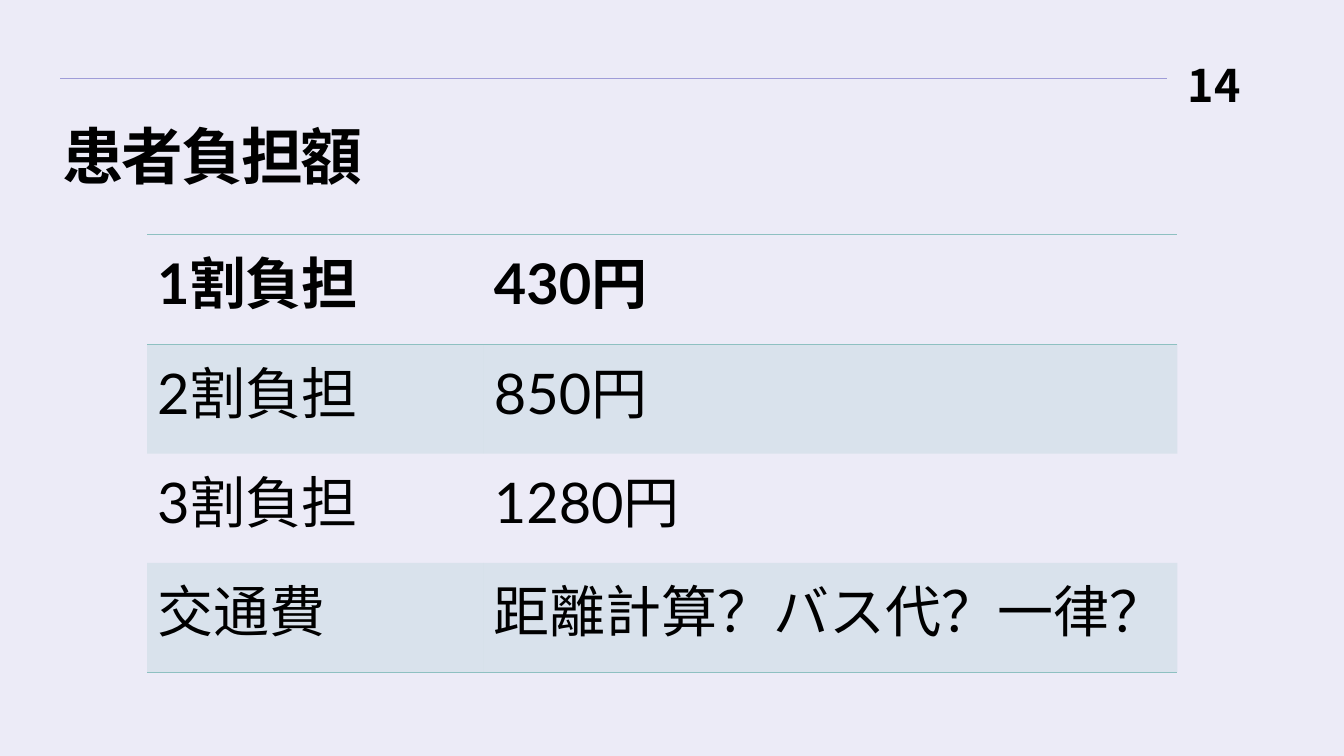
from dataclasses import dataclass
from typing import Optional

import pptx
import pptx.dml.color
import pptx.enum.shapes
import pptx.enum.text
import pptx.oxml
import pptx.oxml.ns
import pptx.util

Pt = pptx.util.Pt
qn = pptx.oxml.ns.qn
ALIGN = pptx.enum.text.PP_ALIGN
ANCHOR = pptx.enum.text.MSO_ANCHOR


@dataclass(frozen=True)
class Theme:
    background: str = "ECEBF7"
    rule: str = "9F9CD8"
    accent: str = "8EC0C1"
    text: str = "000000"
    heading_font: str = "Noto Sans CJK JP"
    table_font: str = "Lato"
    title_size: float = 44
    number_size: float = 32
    table_size: float = 40
    band_alpha: int = 20


@dataclass(frozen=True)
class Label:
    text: str
    left: float
    top: float
    width: float
    height: float
    size: float
    align: ALIGN
    anchor: ANCHOR
    insets: tuple[float, float, float, float]
    line_spacing: Optional[float] = None
    tracking: float = 0


@dataclass(frozen=True)
class Charge:
    category: str
    amount: str


THEME = Theme()

LABELS = [
    Label("患者負担額", 44.64, 86.4, 873.36, 95.04, THEME.title_size,
          ALIGN.LEFT, ANCHOR.TOP, (0, 3.6, 7.2, 3.6), 0.9, -1.5),
    Label("14", 814.32, 41.04, 72, 38.16, THEME.number_size,
          ALIGN.RIGHT, ANCHOR.MIDDLE, (0, 0, 0, 0)),
]

CHARGES = [
    Charge("1割負担", "430円"),
    Charge("2割負担", "850円"),
    Charge("3割負担", "1280円"),
    Charge("交通費", "距離計算？バス代？一律？"),
]
TABLE_LEFT, TABLE_TOP = 105.12, 167.76
COLUMN_WIDTHS = (240.48, 495.36)
ROW_HEIGHT = 78.12


def rgb(value: str) -> pptx.dml.color.RGBColor:
    return pptx.dml.color.RGBColor.from_string(value)


def write(paragraph, text: str, font: str, size: float, bold: bool, tracking: float = 0) -> None:
    run = paragraph.add_run()
    run.text = text
    for name, value in {"name": font, "size": Pt(size), "bold": bold}.items():
        setattr(run.font, name, value)
    run.font.color.rgb = rgb(THEME.text)
    properties = run.font._element
    east_asian = properties.makeelement(qn("a:ea"), {"typeface": THEME.heading_font})
    properties.find(qn("a:latin")).addnext(east_asian)
    if tracking:
        properties.set("spc", str(round(tracking * 100)))


def add_label(slide, label: Label) -> None:
    box = slide.shapes.add_textbox(Pt(label.left), Pt(label.top), Pt(label.width), Pt(label.height))
    frame = box.text_frame
    left, top, right, bottom = map(Pt, label.insets)
    frame_format = {
        "word_wrap": True, "vertical_anchor": label.anchor,
        "margin_left": left, "margin_top": top, "margin_right": right, "margin_bottom": bottom,
    }
    for name, value in frame_format.items():
        setattr(frame, name, value)
    paragraph = frame.paragraphs[0]
    paragraph.alignment = label.align
    paragraph.line_spacing = label.line_spacing
    write(paragraph, label.text, THEME.heading_font, label.size, True, label.tracking)


def add_header_rule(slide) -> None:
    rule = slide.shapes.add_connector(
        pptx.enum.shapes.MSO_CONNECTOR.STRAIGHT, Pt(43.2), Pt(56.16), Pt(833.76), Pt(56.16))
    rule.line.color.rgb = rgb(THEME.rule)
    rule.line.width = Pt(0.75)
    properties = rule._element.spPr
    properties.append(properties.makeelement(qn("a:effectLst"), {}))


def set_borders(cell, ruled_sides: str) -> None:
    """Rule the given sides of a cell and clear the others."""
    properties = cell._tc.get_or_add_tcPr()
    for position, side in enumerate("LRTB"):
        fill = (f'<a:solidFill><a:srgbClr val="{THEME.accent}"/></a:solidFill>'
                if side in ruled_sides else "<a:noFill/>")
        properties.insert(position, pptx.oxml.parse_xml(
            f'<a:ln{side} {pptx.oxml.ns.nsdecls("a")} w="{Pt(1)}">{fill}</a:ln{side}>'))


def fill_band(cell, banded: bool) -> None:
    if not banded:
        cell.fill.background()
        return
    cell.fill.solid()
    cell.fill.fore_color.rgb = rgb(THEME.accent)
    color = cell._tc.tcPr.find(qn("a:solidFill"))[0]
    color.append(color.makeelement(qn("a:alpha"), {"val": str(THEME.band_alpha * 1000)}))


def add_charge_table(slide) -> None:
    table = slide.shapes.add_table(
        len(CHARGES), len(COLUMN_WIDTHS), Pt(TABLE_LEFT), Pt(TABLE_TOP),
        Pt(sum(COLUMN_WIDTHS)), Pt(ROW_HEIGHT * len(CHARGES))).table
    for name, value in {"first_row": False, "horz_banding": False}.items():
        setattr(table, name, value)
    for column, width in zip(table.columns, COLUMN_WIDTHS):
        column.width = Pt(width)
    # The first row is ruled above and below, the last row below
    ruled_sides = {0: "TB", 1: "T", len(CHARGES) - 1: "B"}
    for index, charge in enumerate(CHARGES):
        table.rows[index].height = Pt(ROW_HEIGHT)
        for cell, text in zip(table.rows[index].cells, (charge.category, charge.amount)):
            write(cell.text_frame.paragraphs[0], text, THEME.table_font,
                  THEME.table_size, index == 0)
            fill_band(cell, index % 2 == 1)
            set_borders(cell, ruled_sides.get(index, ""))


def main() -> None:
    deck = pptx.Presentation()
    deck.slide_width, deck.slide_height = Pt(960), Pt(540)
    slide = deck.slides.add_slide(deck.slide_layouts[6])
    slide.background.fill.solid()
    slide.background.fill.fore_color.rgb = rgb(THEME.background)

    # Header: rule, title and page number
    add_header_rule(slide)
    for label in LABELS:
        add_label(slide, label)

    # Patient charges
    add_charge_table(slide)
    deck.save("out.pptx")


if __name__ == "__main__":
    main()
